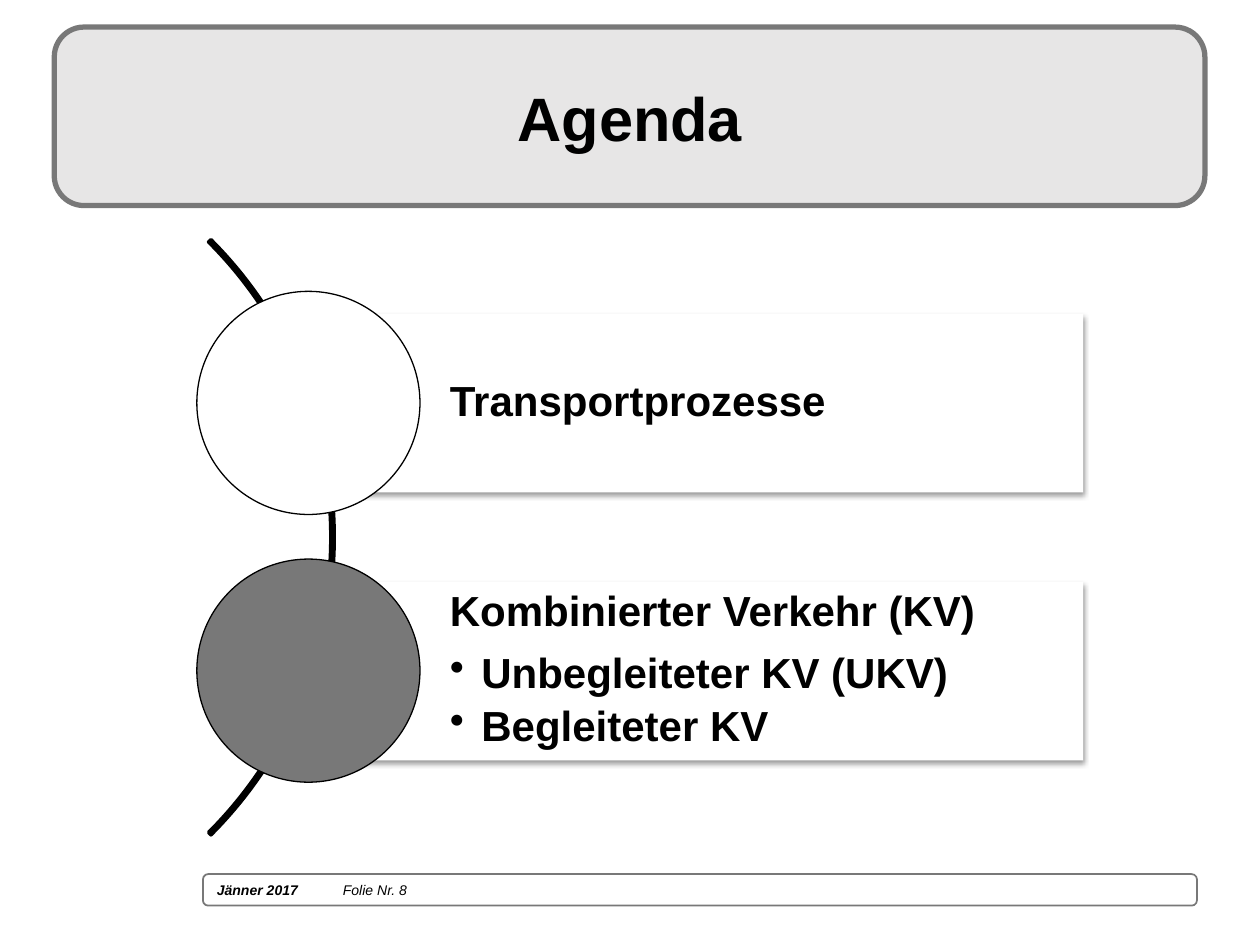
from lxml.etree import SubElement as Sub
from pptx import Presentation
from pptx.dml.color import RGBColor as RGB
from pptx.enum.shapes import MSO_SHAPE as Kind
from pptx.enum.text import MSO_ANCHOR as Anchor, PP_ALIGN as Align
from pptx.oxml.ns import qn
from pptx.util import Pt

HUES = {"ink": "000000", "gray": "787878", "pale": "E7E6E6", "white": "FFFFFF"}


def draw(kind, box, fill=None, line=None, width=1):
    shape = slide.shapes.add_shape(kind, *[Pt(v) for v in box])
    shape.shadow.inherit = False
    if fill:
        shape.fill.solid()
        shape.fill.fore_color.rgb = RGB.from_string(HUES[fill])
    else:
        shape.fill.background()
    if line:
        shape.line.color.rgb = RGB.from_string(HUES[line])
        shape.line.width = Pt(width)
    else:
        shape.line.fill.background()
    return shape


def write(para, text, size, bold=True, italic=None):
    run = para.add_run()
    run.text = text
    font = run.font
    font.name, font.size, font.bold, font.italic = "Arial", Pt(size), bold, italic
    font.color.rgb = RGB.from_string(HUES["ink"])


deck = Presentation()
deck.slide_width, deck.slide_height = Pt(720), Pt(540)
slide = deck.slides.add_slide(deck.slide_layouts[5])

# Footer bar
foot = draw(Kind.ROUNDED_RECTANGLE, (116, 499.5, 568, 18), "white", "gray")
foot.text_frame.vertical_anchor = Anchor.MIDDLE
para = foot.text_frame.paragraphs[0]
para.alignment = Align.LEFT
tabs = Sub(para._p.get_or_add_pPr(), qn("a:tabLst"))
Sub(tabs, qn("a:tab"), pos=str(Pt(72)), algn="l")
write(para, "Jänner 2017\t", 8, True, True)
write(para, "Folie Nr. 8", 8, False, True)

# Title on its panel
panel = draw(Kind.ROUNDED_RECTANGLE, (31, 15.5, 657.5, 102), "pale", "gray", 3)
title = slide.shapes.title
title.left, title.top, title.width, title.height = Pt(42.5), Pt(22), Pt(635), Pt(90)
title.text_frame.vertical_anchor = Anchor.MIDDLE
para = title.text_frame.paragraphs[0]
para.alignment = Align.CENTER
write(para, "Agenda", 35)
panel._element.addnext(title._element)

# Arc behind the topics
arc = draw(Kind.BLOCK_ARC, (-290, 66.5, 481, 481), None, "ink", 2)
for i, turn in enumerate((189, 27, 0.004)):
    arc.adjustments[i] = turn

# Topics: card with a shadow, circle on its left edge
topics = [
    ("white", Anchor.MIDDLE, "Transportprozesse", []),
    ("gray", Anchor.TOP, "Kombinierter Verkehr (KV)",
     ["Unbegleiteter KV (UKV)", "Begleiteter KV"]),
]
for i, (hue, anchor, head, points) in enumerate(topics):
    top = 179.5 + 153 * i
    card = draw(Kind.RECTANGLE, (176.5, top, 442.5, 102), "white")
    glow = Sub(card._element.spPr.find(qn("a:effectLst")), qn("a:outerShdw"),
               blurRad=str(Pt(3.1)), dist=str(Pt(1.6)), dir="5400000",
               algn="ctr", rotWithShape="0")
    tint = Sub(glow, qn("a:srgbClr"), val=HUES["ink"])
    Sub(tint, qn("a:alpha"), val="38000")

    frame = card.text_frame
    frame.word_wrap = True
    frame.vertical_anchor = anchor
    frame.margin_left = Pt(80.6)
    frame.margin_top = frame.margin_right = frame.margin_bottom = Pt(5)
    for n, text in enumerate([head] + points):
        para = frame.add_paragraph() if n else frame.paragraphs[0]
        para.alignment = Align.LEFT
        para.line_spacing = 0.9
        if n:
            para.level = 1
            props = para._p.get_or_add_pPr()
            props.set("marL", str(Pt(18)))
            props.set("indent", str(-Pt(18)))
            Sub(props, qn("a:buChar"), char="•")
        if points:
            para.space_after = Pt(4.3 if n else 9.5)
        write(para, text, 24)

    draw(Kind.OVAL, (112.5, top - 13, 127.5, 127.5), hue, "ink", 0.75)

deck.save("out.pptx")
